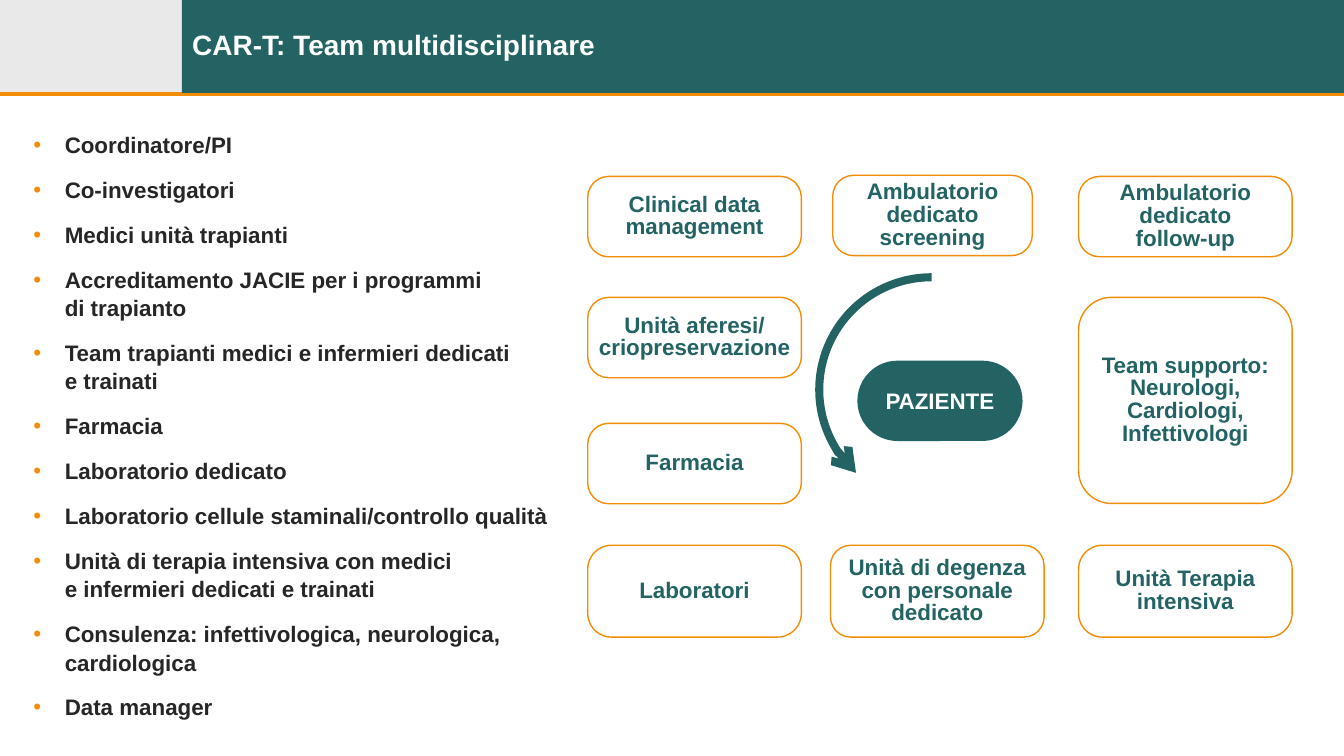
from lxml import etree
from pptx import Presentation
from pptx.dml.color import RGBColor
from pptx.enum.shapes import MSO_CONNECTOR, MSO_SHAPE
from pptx.enum.text import MSO_ANCHOR, MSO_AUTO_SIZE, PP_ALIGN
from pptx.oxml.ns import qn
from pptx.util import Pt

RECT, ROUNDED, ARC = MSO_SHAPE.RECTANGLE, MSO_SHAPE.ROUNDED_RECTANGLE, MSO_SHAPE.ARC
STRAIGHT = MSO_CONNECTOR.STRAIGHT
MIDDLE = MSO_ANCHOR.MIDDLE
CENTER, LEFT = PP_ALIGN.CENTER, PP_ALIGN.LEFT
GROW = MSO_AUTO_SIZE.SHAPE_TO_FIT_TEXT

COLORS = {"teal": "236364", "orange": "F38D08", "grey": "E9E9E9",
          "ink": "262626", "white": "FFFFFF"}


def color(name):
    return RGBColor.from_string(COLORS[name])


class TeamSlide:
    font_name = "Arial"
    text_size = 16

    def __init__(self, prs):
        self.slide = prs.slides.add_slide(prs.slide_layouts[5])
        self.shapes = self.slide.shapes

    def style(self, paragraph, ink, size=text_size, align=CENTER, spacing=None):
        paragraph.alignment = align
        if spacing:
            paragraph.line_spacing = spacing
        for run in paragraph.runs:
            font = run.font
            font.name, font.size, font.bold = self.font_name, Pt(size), True
            font.color.rgb = color(ink)

    def shape(self, kind, box, fill=None, line=None, width=1, adjust=()):
        shape = self.shapes.add_shape(kind, *map(Pt, box))
        shape.shadow.inherit = False
        for i, value in enumerate(adjust):
            shape.adjustments[i] = value
        if fill:
            shape.fill.solid()
            shape.fill.fore_color.rgb = color(fill)
        else:
            shape.fill.background()
        if line:
            shape.line.color.rgb = color(line)
            shape.line.width = Pt(width)
        else:
            shape.line.fill.background()
        return shape

    def label(self, shape, text, ink, spacing=None, side_inset=7.2):
        frame = shape.text_frame
        frame.word_wrap, frame.vertical_anchor = True, MIDDLE
        frame.margin_left = frame.margin_right = Pt(side_inset)
        frame.text = text
        for paragraph in frame.paragraphs:
            self.style(paragraph, ink, spacing=spacing)

    def rule(self, x1, y1, x2, y2, width):
        rule = self.shapes.add_connector(STRAIGHT, *map(Pt, (x1, y1, x2, y2)))
        rule.line.color.rgb = color("orange")
        rule.line.width = Pt(width)
        etree.SubElement(rule.element.spPr, qn("a:effectLst"))

    def title(self, text, box):
        title = self.shapes.title
        title.left, title.top, title.width, title.height = map(Pt, box)
        frame = title.text_frame
        frame.text = text
        frame.word_wrap, frame.vertical_anchor = True, MIDDLE
        self.style(frame.paragraphs[0], "white", 20, LEFT, 0.9)
        # Bring the title in front of the header band
        title.element.getparent().append(title.element)

    def bullets(self, items, box, indent):
        frame = self.shapes.add_textbox(*map(Pt, box)).text_frame
        frame.word_wrap, frame.auto_size = True, GROW
        frame.text = "\n".join(items)
        for i, paragraph in enumerate(frame.paragraphs):
            self.style(paragraph, "ink", align=LEFT, spacing=1.05)
            paragraph.space_before = Pt(12 if i else 0)
            props = paragraph._p.get_or_add_pPr()
            props.set("marL", str(Pt(indent)))
            props.set("indent", str(-Pt(indent)))
            tint = etree.SubElement(props, qn("a:buClr"))
            etree.SubElement(tint, qn("a:srgbClr"), val=COLORS["orange"])
            etree.SubElement(props, qn("a:buFont"), typeface=self.font_name)
            etree.SubElement(props, qn("a:buChar"), char="•")

    def arc_arrow(self, box, rotation, adjust, width):
        arc = self.shape(ARC, box, line="teal", width=width, adjust=adjust)
        arc.rotation = rotation
        etree.SubElement(arc.line._get_or_add_ln(), qn("a:headEnd"), type="arrow")


TEAM_MEMBERS = [
    "Coordinatore/PI",
    "Co-investigatori",
    "Medici unità trapianti",
    "Accreditamento JACIE per i programmi\vdi trapianto",
    "Team trapianti medici e infermieri dedicati\ve trainati",
    "Farmacia",
    "Laboratorio dedicato",
    "Laboratorio cellule staminali/controllo qualità",
    "Unità di terapia intensiva con medici\ve infermieri dedicati e trainati",
    "Consulenza: infettivologica, neurologica, cardiologica",
    "Data manager",
]

# Unit grid: columns, rows and usual box size
COL_LEFT, COL_MID, COL_RIGHT = 419.8, 593.2, 770.4
ROW_1, ROW_2, ROW_3, ROW_4 = 126, 212.4, 302.4, 389.5
UNIT_W, UNIT_H, LAST_H = 152.6, 57.4, 65.6
CORNER = 0.26

# Text, left, top, width, height, corner, side inset
UNITS = [
    ("Clinical data management", COL_LEFT, ROW_1, UNIT_W, UNIT_H, CORNER, 7.2),
    ("Unità aferesi/\ncriopreservazione", COL_LEFT, ROW_2, UNIT_W, UNIT_H, CORNER, 0),
    ("Farmacia", COL_LEFT, ROW_3, UNIT_W, UNIT_H, CORNER, 7.2),
    ("Laboratori", COL_LEFT, ROW_4, UNIT_W, LAST_H, CORNER, 7.2),
    ("Unità di degenza con personale dedicato", COL_MID, ROW_4, UNIT_W, LAST_H, 0.22, 7.2),
    ("Unità Terapia intensiva", COL_RIGHT, ROW_4, UNIT_W, LAST_H, CORNER, 7.2),
    ("Team supporto: Neurologi, Cardiologi, Infettivologi",
     COL_RIGHT, ROW_2, UNIT_W, 147.2, 0.16, 7.2),
    ("Ambulatorio dedicato\nfollow-up", COL_RIGHT, ROW_1, UNIT_W, UNIT_H, CORNER, 7.2),
    ("Ambulatorio dedicato\nscreening", 594.8, 125.2, 142.6, UNIT_H, CORNER, 7.2),
]


def main():
    prs = Presentation()
    prs.slide_width, prs.slide_height = Pt(960), Pt(540)
    team = TeamSlide(prs)

    # Header
    team.shape(RECT, (0, 0, 130, 66.4), fill="grey")
    team.rule(-0.5, 67, 960, 67, 3)
    team.shape(RECT, (130, 0, 830, 66.4), fill="teal")
    team.title("CAR-T: Team multidisciplinare", (130, 0, 828, 66.4))

    # Team list
    team.bullets(TEAM_MEMBERS, (16.8, 89.3, 437, 419), 22.4)

    # Patient at the centre
    patient = team.shape(ROUNDED, (612.4, 257.6, 118, 57.4), fill="teal", adjust=[0.5])
    team.label(patient, "PAZIENTE", "white")

    # Units around the patient
    for text, left, top, width, height, corner, inset in UNITS:
        unit = team.shape(ROUNDED, (left, top, width, height), line="orange", adjust=[corner])
        team.label(unit, text, "teal", Pt(16.2), inset)

    # Path from screening to ward
    team.arc_arrow((585.2, 198, 160.6, 160.6), 270, (133.38, 0), 5.75)

    prs.save("out.pptx")


if __name__ == "__main__":
    main()
